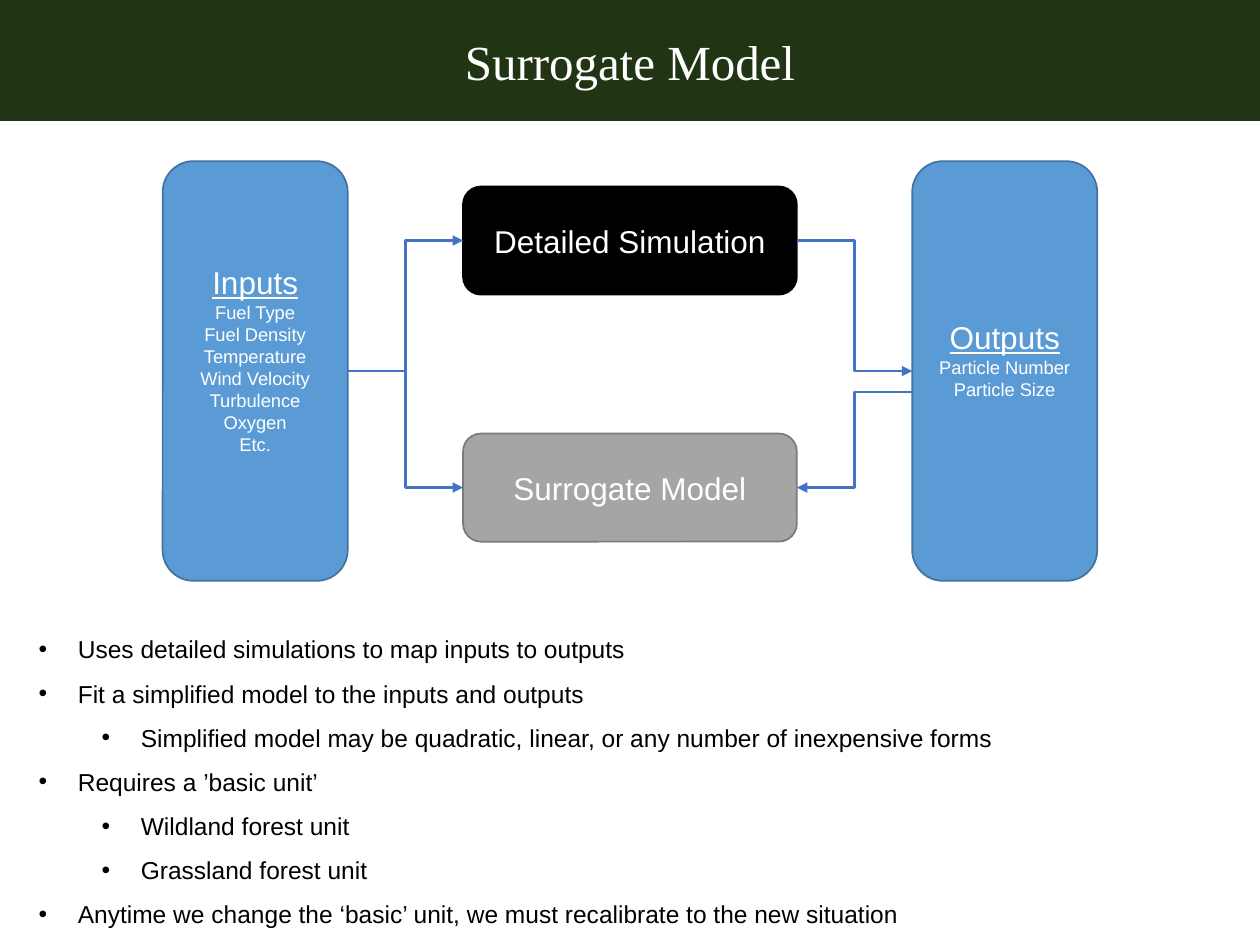
from dataclasses import dataclass

from lxml import etree
from pptx import Presentation
from pptx.dml.color import RGBColor
from pptx.enum.shapes import MSO_CONNECTOR, MSO_SHAPE
from pptx.enum.text import MSO_ANCHOR, PP_ALIGN
from pptx.oxml.ns import qn
from pptx.util import Cm, Pt

RECT = MSO_SHAPE.RECTANGLE
ROUNDED = MSO_SHAPE.ROUNDED_RECTANGLE
ELBOW = MSO_CONNECTOR.ELBOW
MIDDLE = MSO_ANCHOR.MIDDLE
CENTER = PP_ALIGN.CENTER
LEFT_SITE, RIGHT_SITE = 1, 3


@dataclass(frozen=True)
class Theme:
    title_font: str = "Times New Roman"
    body_font: str = "Arial"
    title_size: float = 28
    heading_size: float = 18
    item_size: float = 10.5
    bullet_size: float = 14
    white: str = "FFFFFF"
    black: str = "000000"
    banner: str = "213514"
    blue: str = "5B9BD5"
    blue_edge: str = "43739E"
    gray: str = "A5A5A5"
    gray_edge: str = "7A7A7A"
    arrow: str = "4472C4"
    edge_width: float = 1
    arrow_width: float = 1.5


@dataclass(frozen=True)
class Box:
    heading: str
    left: float
    top: float
    width: float
    height: float
    fill: str
    edge: str
    items: tuple[str, ...] = ()


@dataclass(frozen=True)
class Bullet:
    text: str
    level: int = 0


THEME = Theme()
SLIDE_W, SLIDE_H = 25.4, 19.05
BANNER_H = 2.44
SIDE_LEFT, SIDE_TOP, SIDE_W, SIDE_H = 3.28, 3.25, 3.73, 8.46
MODEL_W, MODEL_H = 6.73, 2.18
MODEL_LEFT = (SLIDE_W - MODEL_W) / 2
RETURN_Y = 7.9
LIST_LEFT, LIST_TOP = 0.53, 12.37
BULLET_INDENT, LEVEL_STEP = 0.79, 1.27
ITEM_BOTTOM_INSET = 0.61

INPUTS = Box("Inputs", SIDE_LEFT, SIDE_TOP, SIDE_W, SIDE_H, THEME.blue, THEME.blue_edge,
             ("Fuel Type", "Fuel Density", "Temperature", "Wind Velocity",
              "Turbulence", "Oxygen", "Etc."))
OUTPUTS = Box("Outputs", SLIDE_W - SIDE_LEFT - SIDE_W, SIDE_TOP, SIDE_W, SIDE_H,
              THEME.blue, THEME.blue_edge, ("Particle Number", "Particle Size"))
SIMULATION = Box("Detailed Simulation", MODEL_LEFT, 3.76, MODEL_W, MODEL_H,
                 THEME.black, THEME.black)
SURROGATE = Box("Surrogate Model", MODEL_LEFT, 8.74, MODEL_W, MODEL_H,
                THEME.gray, THEME.gray_edge)

BULLETS = (
    Bullet("Uses detailed simulations to map inputs to outputs"),
    Bullet("Fit a simplified model to the inputs and outputs"),
    Bullet("Simplified model may be quadratic, linear, or any number of inexpensive forms", 1),
    Bullet("Requires a ’basic unit’"),
    Bullet("Wildland forest unit", 1),
    Bullet("Grassland forest unit", 1),
    Bullet("Anytime we change the ‘basic’ unit, we must recalibrate to the new situation"),
)


def style(p, size: float, color: str, font: str = THEME.body_font) -> None:
    for r in p.runs:
        r.font.name = font
        r.font.size = Pt(size)
        r.font.color.rgb = RGBColor.from_string(color)


def add_panel(s, kind, left: float, top: float, width: float, height: float, fill: str):
    sp = s.shapes.add_shape(kind, Cm(left), Cm(top), Cm(width), Cm(height))
    sp.shadow.inherit = False
    sp.fill.solid()
    sp.fill.fore_color.rgb = RGBColor.from_string(fill)
    sp.text_frame.vertical_anchor = MIDDLE
    return sp


def add_banner(s, title: str) -> None:
    sp = add_panel(s, RECT, 0, 0, SLIDE_W, BANNER_H, THEME.banner)
    sp.line.fill.background()
    sp.text_frame.text = title
    p = sp.text_frame.paragraphs[0]
    p.alignment = CENTER
    style(p, THEME.title_size, THEME.white, THEME.title_font)


def add_box(s, box: Box):
    sp = add_panel(s, ROUNDED, box.left, box.top, box.width, box.height, box.fill)
    sp.line.color.rgb = RGBColor.from_string(box.edge)
    sp.line.width = Pt(THEME.edge_width)
    tf = sp.text_frame
    tf.text = "\n".join((box.heading, *box.items))
    for i, p in enumerate(tf.paragraphs):
        p.alignment = CENTER
        style(p, THEME.item_size if i else THEME.heading_size, THEME.white)
    if box.items:
        tf.margin_bottom = Cm(ITEM_BOTTOM_INSET)
        tf.paragraphs[0].runs[0].font.underline = True
    return sp


def add_arrow(s, source, target, start_y: int | None = None, backward: bool = False) -> None:
    start_site, end_site = (LEFT_SITE, RIGHT_SITE) if backward else (RIGHT_SITE, LEFT_SITE)
    start_x = source.left if backward else source.left + source.width
    end_x = target.left + target.width if backward else target.left
    y = source.top + source.height // 2 if start_y is None else start_y
    line = s.shapes.add_connector(ELBOW, start_x, y, end_x, target.top + target.height // 2)
    if start_y is None:
        line.begin_connect(source, start_site)
    line.end_connect(target, end_site)
    line.line.color.rgb = RGBColor.from_string(THEME.arrow)
    line.line.width = Pt(THEME.arrow_width)
    etree.SubElement(line.line._get_or_add_ln(), qn("a:tailEnd"), type="triangle")
    etree.SubElement(line._element.spPr, qn("a:effectLst"))


def add_bullets(s, bullets: tuple[Bullet, ...]) -> None:
    sp = s.shapes.add_textbox(Cm(LIST_LEFT), Cm(LIST_TOP),
                              Cm(SLIDE_W - 2 * LIST_LEFT), Cm(SLIDE_H - LIST_TOP))
    tf = sp.text_frame
    tf.word_wrap = True
    tf.text = "\n".join(b.text for b in bullets)
    for p, bullet in zip(tf.paragraphs, bullets):
        p.level = bullet.level
        p.line_spacing = 1.5
        style(p, THEME.bullet_size, THEME.black)
        pPr = p._p.get_or_add_pPr()
        pPr.set("marL", str(Cm(BULLET_INDENT + LEVEL_STEP * bullet.level)))
        pPr.set("indent", str(-Cm(BULLET_INDENT)))
        etree.SubElement(pPr, qn("a:buFont"), typeface=THEME.body_font)
        etree.SubElement(pPr, qn("a:buChar"), char="•")


def main() -> None:
    prs = Presentation()
    prs.slide_width, prs.slide_height = Cm(SLIDE_W), Cm(SLIDE_H)
    s = prs.slides.add_slide(prs.slide_layouts[6])
    add_banner(s, "Surrogate Model")
    add_bullets(s, BULLETS)
    inputs, simulation, outputs, surrogate = (
        add_box(s, box) for box in (INPUTS, SIMULATION, OUTPUTS, SURROGATE))
    add_arrow(s, inputs, simulation)
    add_arrow(s, simulation, outputs)
    add_arrow(s, inputs, surrogate)
    add_arrow(s, outputs, surrogate, start_y=Cm(RETURN_Y), backward=True)
    prs.save("out.pptx")


if __name__ == "__main__":
    main()
